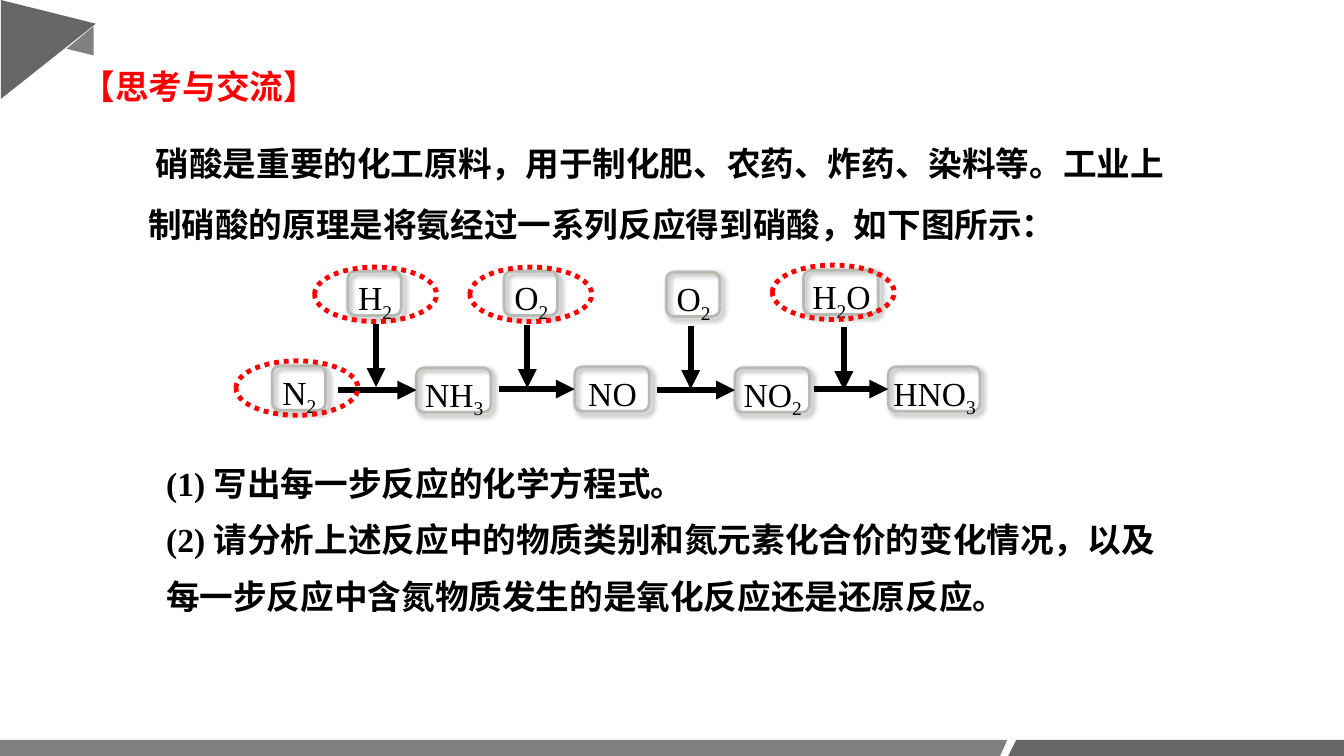
"""Build the slide on the industrial route from nitrogen to nitric acid."""
from lxml import etree
from pptx import Presentation
from pptx.dml.color import RGBColor
from pptx.enum.dml import MSO_LINE
from pptx.enum.shapes import MSO_CONNECTOR, MSO_SHAPE
from pptx.enum.text import MSO_ANCHOR, PP_ALIGN
from pptx.oxml.ns import qn
from pptx.util import Inches, Pt

BLACK = RGBColor(0, 0, 0)
RED = RGBColor(0xFF, 0, 0)
DARK = RGBColor(0x66, 0x66, 0x66)
GREY = RGBColor(0x80, 0x80, 0x80)
EDGE = RGBColor(0xB8, 0xBA, 0xB4)

TEXT = {"name": "Times New Roman", "size": Pt(24), "bold": False}
STRONG = {**TEXT, "bold": True}

TITLE = "【思考与交流】"
INTRO = (" 硝酸是重要的化工原料，用于制化肥、农药、炸药、染料等。"
         "工业上制硝酸的原理是将氨经过一系列反应得到硝酸，如下图所示：")
QUESTIONS = [
    "(1) 写出每一步反应的化学方程式。",
    "(2) 请分析上述反应中的物质类别和氮元素化合价的变化情况，"
    "以及每一步反应中含氮物质发生的是氧化反应还是还原反应。",
]

BOX_H = 0.44
CHAIN = [("N2", 2.7, 3.63, 0.53), ("NH3", 4.13, 3.65, 0.74), ("NO", 5.7, 3.64, 0.74),
         ("NO2", 7.29, 3.65, 0.74), ("HNO3", 8.81, 3.64, 0.91)]
REAGENTS = [("H2", 3.45, 2.69, 0.53), ("O2", 5, 2.69, 0.53),
            ("O2", 6.61, 2.7, 0.53), ("H2O", 7.97, 2.68, 0.74)]
STEP_STARTS = [3.35, 4.95, 6.52, 8.07]
FEEDS = [(3.73, 3.21), (5.23, 3.22), (6.85, 3.23), (8.37, 3.24)]
FEED_LENGTH = 0.63
RINGS = [(2.34, 3.58), (3.12, 2.65), (4.66, 2.65), (7.66, 2.63)]


def set_format(obj, values):
    """Set each named attribute on an object."""
    for name, value in values.items():
        setattr(obj, name, value)


def add_run(p, text, color=BLACK, font=TEXT):
    """Append a formatted run to a paragraph."""
    r = p.add_run()
    r.text = text
    set_format(r.font, font)
    r.font.color.rgb = color
    return r


def fill_plain(sp, color):
    """Give a shape a solid fill without outline or shadow."""
    sp.shadow.inherit = False
    sp.fill.solid()
    sp.fill.fore_color.rgb = color
    sp.line.fill.background()


def add_triangle(shapes, x, y, w, h, rotation, apex, color):
    """Add a turned corner triangle."""
    sp = shapes.add_shape(MSO_SHAPE.ISOSCELES_TRIANGLE,
                          Inches(x), Inches(y), Inches(w), Inches(h))
    sp.rotation = rotation
    sp.adjustments[0] = apex
    fill_plain(sp, color)


def add_band(shapes, points, color):
    """Add a slanted footer band."""
    start, *rest = [(Inches(x), Inches(y)) for x, y in points]
    builder = shapes.build_freeform(*start)
    builder.add_line_segments(rest, close=True)
    fill_plain(builder.convert_to_shape(), color)


def add_title(slide):
    """Place and format the title."""
    sp = slide.shapes.title
    set_format(sp, {"left": Inches(0.71), "top": Inches(0.62),
                    "width": Inches(3.28), "height": Inches(0.47)})
    sp.text_frame.vertical_anchor = MSO_ANCHOR.MIDDLE
    p = sp.text_frame.paragraphs[0]
    p.alignment = PP_ALIGN.LEFT
    add_run(p, TITLE, RED, STRONG)


def add_text(shapes, x, y, w, h, lines, spacing):
    """Add a box of bold body paragraphs."""
    tf = shapes.add_textbox(Inches(x), Inches(y), Inches(w), Inches(h)).text_frame
    tf.word_wrap = True
    for i, line in enumerate(lines):
        p = tf.add_paragraph() if i else tf.paragraphs[0]
        p.line_spacing = spacing
        add_run(p, line, font=STRONG)


def add_shadow(sp):
    """Give a shape a soft shadow to the lower right."""
    sp.shadow.inherit = False
    effects = sp._element.spPr.find(qn("a:effectLst"))
    shadow = etree.SubElement(effects, qn("a:outerShdw"), blurRad=str(Pt(4)),
                              dist=str(Pt(3)), dir="2700000", algn="tl", rotWithShape="0")
    color = etree.SubElement(shadow, qn("a:srgbClr"), val="000000")
    etree.SubElement(color, qn("a:alpha"), val="40000")


def add_substance(shapes, formula, x, y, w):
    """Add a framed formula with subscripts and return its frame."""
    group = shapes.add_group_shape()
    sp = group.shapes.add_shape(MSO_SHAPE.ROUNDED_RECTANGLE,
                                Inches(x), Inches(y), Inches(w), Inches(BOX_H))
    sp.fill.background()
    sp.line.color.rgb = EDGE
    sp.line.width = Pt(2)
    add_shadow(sp)
    label = group.shapes.add_textbox(Inches(x - 0.07), Inches(y + 0.01),
                                     Inches(w + 0.15), Inches(0.5))
    tf = label.text_frame
    tf.word_wrap = True
    p = tf.paragraphs[0]
    p.alignment = PP_ALIGN.CENTER
    for char in formula:
        r = add_run(p, char)
        if char.isdigit():
            r.font._element.set("baseline", "-25000")
    return sp


def add_arrow(shapes, x1, y1, x2, y2, target=None):
    """Add a heavy arrow, joined to the left side of a target if given."""
    line = shapes.add_connector(MSO_CONNECTOR.STRAIGHT,
                                Inches(x1), Inches(y1), Inches(x2), Inches(y2))
    if target is not None:
        line.end_connect(target, 1)
    line.line.color.rgb = BLACK
    line.line.width = Pt(4.5)
    etree.SubElement(line.line._get_or_add_ln(), qn("a:tailEnd"), type="triangle")
    etree.SubElement(line._element.spPr, qn("a:effectLst"))


def add_ring(shapes, x, y):
    """Add a dotted red ring."""
    sp = shapes.add_shape(MSO_SHAPE.OVAL, Inches(x), Inches(y), Inches(1.21), Inches(0.54))
    sp.shadow.inherit = False
    sp.fill.background()
    sp.line.color.rgb = RED
    set_format(sp.line, {"width": Pt(3.5), "dash_style": MSO_LINE.ROUND_DOT})


def main():
    """Build and save the slide."""
    prs = Presentation()
    set_format(prs, {"slide_width": Inches(13.33), "slide_height": Inches(7.5)})
    slide = prs.slides.add_slide(prs.slide_layouts[5])
    shapes = slide.shapes

    add_triangle(shapes, -0.01, 0.02, 0.98, 0.94, 90, 0.24, DARK)
    add_triangle(shapes, 0.65, 0.27, 0.29, 0.27, 270, 0.23, GREY)
    add_band(shapes, [(10.08, 7.34), (13.33, 7.34), (13.33, 7.52), (9.99, 7.52)], DARK)
    add_band(shapes, [(0, 7.34), (9.99, 7.34), (9.91, 7.52), (0, 7.52)], GREY)

    add_title(slide)
    add_text(shapes, 1.37, 1.17, 10.38, 1.24, [INTRO], 1.5)

    for reagent in REAGENTS:
        add_substance(shapes, *reagent)
    frames = [add_substance(shapes, *substance) for substance in CHAIN]
    for start, (_, x, y, _), frame in zip(STEP_STARTS, CHAIN[1:], frames[1:]):
        middle = y + BOX_H / 2
        add_arrow(shapes, start, middle, x, middle, frame)
    for x, y in FEEDS:
        add_arrow(shapes, x, y, x, y + FEED_LENGTH)
    for ring in RINGS:
        add_ring(shapes, *ring)

    add_text(shapes, 1.55, 4.38, 10.1, 1.8, QUESTIONS, 1.4)
    prs.save("out.pptx")


if __name__ == "__main__":
    main()
